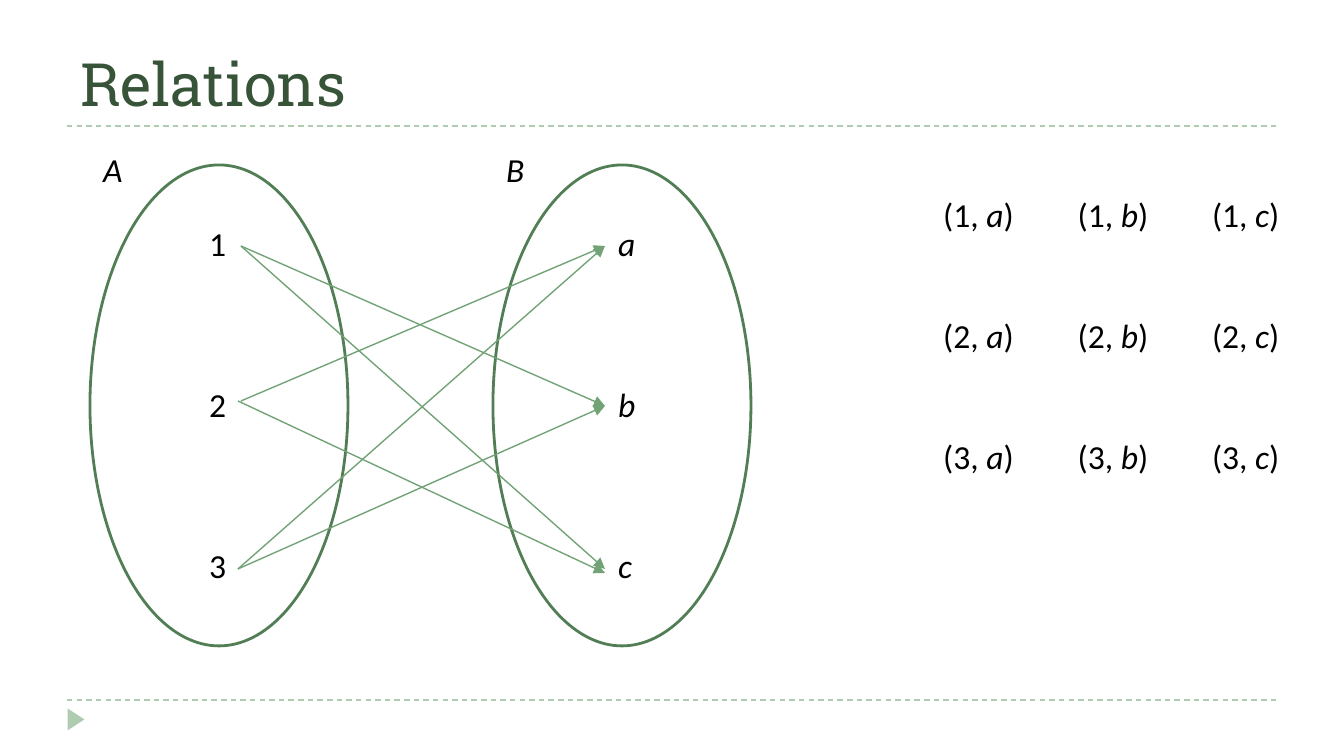
from lxml.etree import SubElement
from pptx import Presentation
from pptx.dml.color import RGBColor
from pptx.enum.dml import MSO_LINE
from pptx.enum.shapes import MSO_CONNECTOR, MSO_SHAPE
from pptx.enum.text import MSO_ANCHOR
from pptx.oxml.ns import qn
from pptx.util import Emu, Pt

PX_PER_INCH = 134.4
BODY_FONT = "Calibri"
TITLE_FONT = "Roboto Slab"
BLACK = "000000"
TITLE_GREEN = "375439"
OUTLINE_GREEN = "527E56"
ARROW_GREEN = "72A376"
PALE_GREEN = "B0CCB0"

NUMBERS = ["1", "2", "3"]
LETTERS = ["a", "b", "c"]
ARROWS = [
    (241, 246, 605, 406),
    (241, 246, 605, 569),
    (241, 401, 605, 246),
    (238, 401, 605, 573),
    (238, 569, 605, 246),
    (238, 569, 605, 406),
]


def px(length):
    """Turn pixels into EMU."""
    return Emu(round(length * 914400 / PX_PER_INCH))


def color(hex_string):
    """Turn a hex string into a colour."""
    return RGBColor.from_string(hex_string)


def add_line(slide, start_x, start_y, end_x, end_y, line_color):
    """Add a thin straight line without a shadow."""
    line = slide.shapes.add_connector(
        MSO_CONNECTOR.STRAIGHT, px(start_x), px(start_y), px(end_x), px(end_y)
    )
    line.line.color.rgb = color(line_color)
    line.line.width = Pt(0.75)
    SubElement(line._element.spPr, qn("a:effectLst"))
    return line


def add_rule(slide, y):
    """Add a dashed rule across the slide."""
    rule = add_line(slide, 67, y, 1277, y, PALE_GREEN)
    rule.line.dash_style = MSO_LINE.DASH


def add_arrow(slide, start_x, start_y, end_x, end_y):
    """Add an arrow with a triangular head at its end."""
    arrow = add_line(slide, start_x, start_y, end_x, end_y, ARROW_GREEN)
    SubElement(arrow.line._get_or_add_ln(), qn("a:tailEnd"), type="triangle")


def add_shape(slide, kind, left, top, width, height, fill):
    """Add a filled preset shape without outline or shadow."""
    shape = slide.shapes.add_shape(kind, px(left), px(top), px(width), px(height))
    shape.shadow.inherit = False
    shape.fill.solid()
    shape.fill.fore_color.rgb = color(fill)
    shape.line.fill.background()
    return shape


def add_text(slide, left, top, width, height, lines, gap=0, wrap=False,
             size=18, font=BODY_FONT, text_color=BLACK):
    """Add paragraphs of text whose letters in LETTERS or set names are italic."""
    box = slide.shapes.add_textbox(px(left), px(top), px(width), px(height))
    frame = box.text_frame
    frame.word_wrap = wrap
    for index, runs in enumerate(lines):
        paragraph = frame.paragraphs[0] if index == 0 else frame.add_paragraph()
        paragraph.space_before = px(gap if index else 0)
        paragraph.font.size = Pt(size)
        paragraph.font.name = font
        paragraph.font.color.rgb = color(text_color)
        for text in runs:
            run = paragraph.add_run()
            run.text = text
            if text in LETTERS + ["A", "B"]:
                run.font.italic = True
    return frame


def add_set(slide, left, name, members, member_left):
    """Add an ellipse with its name and its column of members."""
    ellipse = add_shape(slide, MSO_SHAPE.OVAL, left, 165, 258, 481, "FFFFFF")
    ellipse.line.color.rgb = color(OUTLINE_GREEN)
    ellipse.line.width = Pt(1.5)
    add_text(slide, member_left, 216, 44, 380, [[member] for member in members], gap=121)
    add_text(slide, left, 142, 134, 54, [[name]], wrap=True)


def pair_runs(number):
    """List the runs of one row of ordered pairs."""
    runs = [f"({number}, "]
    for letter in LETTERS[:-1]:
        runs += [letter, f")\t({number}, "]
    return runs + [LETTERS[-1], ")"]


def main():
    """Build and save the slide."""
    presentation = Presentation()
    presentation.slide_width = px(1344)
    presentation.slide_height = px(756)
    slide = presentation.slides.add_slide(presentation.slide_layouts[6])

    add_rule(slide, 700)
    add_rule(slide, 126)
    marker = add_shape(slide, MSO_SHAPE.ISOSCELES_TRIANGLE, 65, 711, 22, 17, PALE_GREEN)
    marker.rotation = 90
    title = add_text(slide, 67, 16, 1210, 109, [["Relations"]], wrap=True,
                     size=32, font=TITLE_FONT, text_color=TITLE_GREEN)
    title.vertical_anchor = MSO_ANCHOR.BOTTOM

    add_set(slide, 90, "A", NUMBERS, 196)
    add_set(slide, 493, "B", LETTERS, 605)
    for arrow in ARROWS:
        add_arrow(slide, *arrow)
    add_text(slide, 930, 187, 364, 298, [pair_runs(number) for number in NUMBERS], gap=81)

    presentation.save("out.pptx")


if __name__ == "__main__":
    main()
